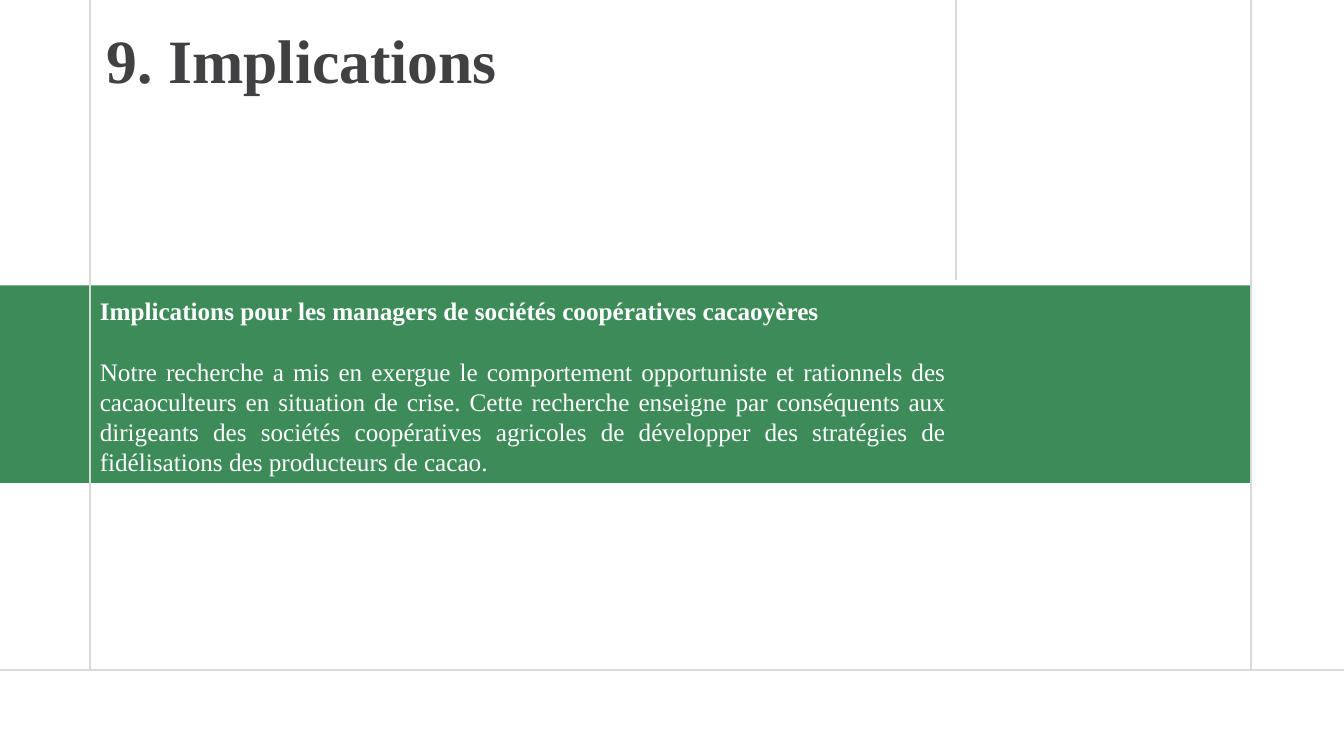
import pptx
import pptx.util
import pptx.dml.color
import pptx.enum.shapes
import pptx.enum.text
import pptx.oxml
import pptx.oxml.ns
from dataclasses import dataclass

Cm = pptx.util.Cm
ALIGN = pptx.enum.text.PP_ALIGN

# Content
HEADING = "9. Implications"
SUBHEADING = "Implications pour les managers de sociétés coopératives cacaoyères"
FINDING = (
    "Notre recherche a mis en exergue le comportement opportuniste et rationnels des "
    "cacaoculteurs en situation de crise. Cette recherche enseigne par conséquents aux "
    "dirigeants des sociétés coopératives agricoles de développer des stratégies de "
    "fidélisations des producteurs de cacao."
)


@dataclass(frozen=True)
class Theme:
    font: str = "Times New Roman"
    heading_size: float = 44
    body_size: float = 18
    heading: str = "414042"
    on_band: str = "FFFFFF"
    band: str = "3E8B5A"
    rule: str = "D9D9D9"
    rule_width: float = 1.5


THEME = Theme()

# Layout in centimetres
SLIDE_W, SLIDE_H = 33.87, 19.05
LEFT_RULE, INNER_RULE, RIGHT_RULE = 2.26, 24.1, 31.52
BASE_RULE = 16.89
BAND_TOP, BAND_H = 7.19, 4.98
RULES = [
    (0, BASE_RULE, SLIDE_W, BASE_RULE),
    (LEFT_RULE, BASE_RULE, LEFT_RULE, 0),
    (RIGHT_RULE, BASE_RULE, RIGHT_RULE, 0),
    (INNER_RULE, 7.06, INNER_RULE, 0),
]


def rgb(code):
    return pptx.dml.color.RGBColor.from_string(code)


def write(paragraph, text, *, size, color, bold=False, align=ALIGN.LEFT, after=0):
    paragraph.alignment = align
    paragraph.space_before = pptx.util.Pt(0)
    paragraph.space_after = pptx.util.Pt(after)
    run = paragraph.add_run()
    run.text = text
    run.font.name = THEME.font
    run.font.size = pptx.util.Pt(size)
    run.font.bold = bold
    run.font.color.rgb = rgb(color)


def place(placeholder, left, top, width, height):
    placeholder.left, placeholder.top = Cm(left), Cm(top)
    placeholder.width, placeholder.height = Cm(width), Cm(height)
    frame = placeholder.text_frame
    frame.word_wrap = True
    frame.auto_size = pptx.enum.text.MSO_AUTO_SIZE.NONE
    frame.vertical_anchor = pptx.enum.text.MSO_ANCHOR.TOP
    return frame


def remove_bullet(paragraph):
    properties = paragraph._p.get_or_add_pPr()
    properties.set("marL", "0")
    properties.set("indent", "0")
    properties.append(pptx.oxml.parse_xml(
        f"<a:buNone {pptx.oxml.ns.nsdecls('a')}/>"))


def add_rule(slide, x1, y1, x2, y2):
    rule = slide.shapes.add_connector(
        pptx.enum.shapes.MSO_CONNECTOR.STRAIGHT, Cm(x1), Cm(y1), Cm(x2), Cm(y2))
    rule.line.color.rgb = rgb(THEME.rule)
    rule.line.width = pptx.util.Pt(THEME.rule_width)
    rule._element.spPr.append(pptx.oxml.parse_xml(
        f"<a:effectLst {pptx.oxml.ns.nsdecls('a')}/>"))


def main():
    deck = pptx.Presentation()
    deck.slide_width, deck.slide_height = Cm(SLIDE_W), Cm(SLIDE_H)
    slide = deck.slides.add_slide(deck.slide_layouts[1])
    heading, body = slide.placeholders

    # Title
    frame = place(heading, 2.44, 0.43, 15.11, 2.13)
    write(frame.paragraphs[0], HEADING, size=THEME.heading_size,
          color=THEME.heading, bold=True)

    # Green band, then the grid rules
    band = slide.shapes.add_shape(
        pptx.enum.shapes.MSO_SHAPE.RECTANGLE,
        Cm(0), Cm(BAND_TOP), Cm(RIGHT_RULE), Cm(BAND_H))
    band.shadow.inherit = False
    band.fill.solid()
    band.fill.fore_color.rgb = rgb(THEME.band)
    band.line.fill.background()
    for ends in RULES:
        add_rule(slide, *ends)

    # Body text, brought in front of the band
    frame = place(body, LEFT_RULE, 7.32, INNER_RULE - LEFT_RULE, 4.88)
    write(frame.paragraphs[0], SUBHEADING, size=THEME.body_size,
          color=THEME.on_band, bold=True, after=21.5)
    write(frame.add_paragraph(), FINDING, size=THEME.body_size,
          color=THEME.on_band, align=ALIGN.JUSTIFY)
    for paragraph in frame.paragraphs:
        remove_bullet(paragraph)
    slide.shapes._spTree.append(body._element)

    deck.save("out.pptx")


if __name__ == "__main__":
    main()
